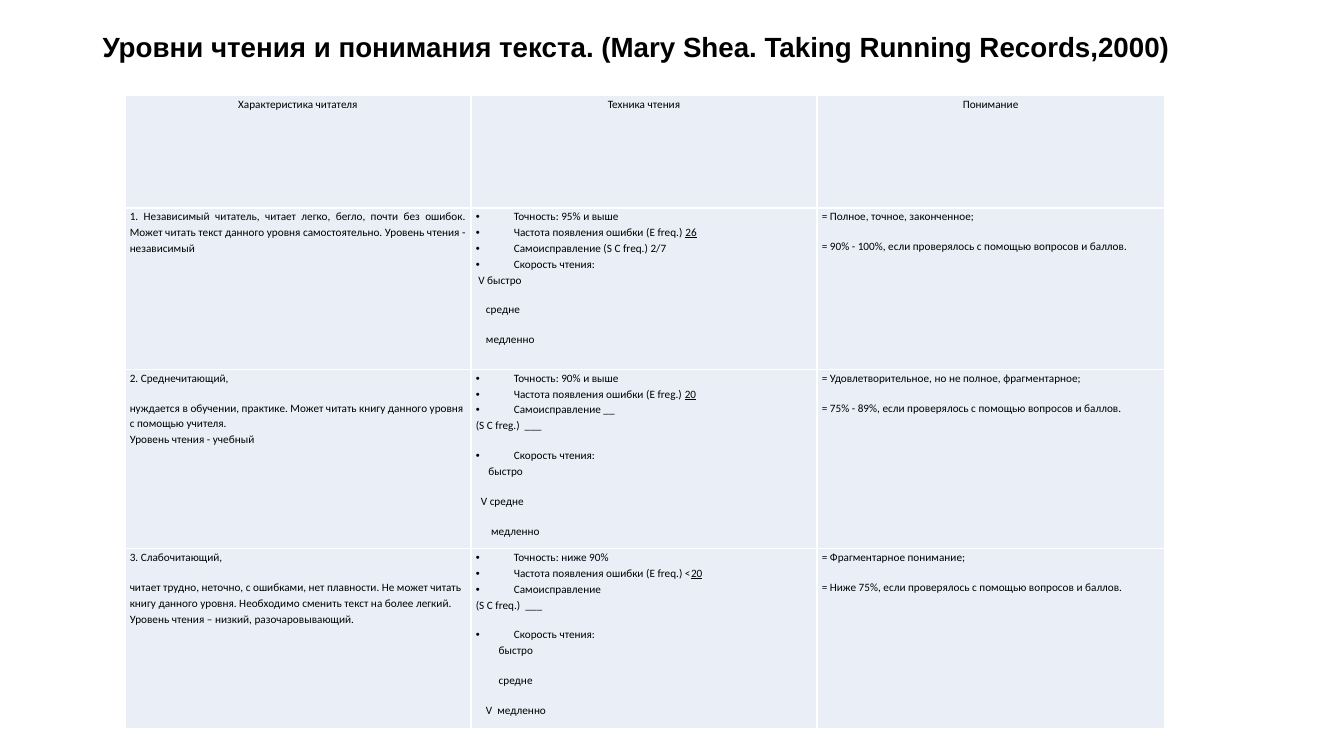
from lxml.etree import SubElement
from pptx import Presentation
from pptx.dml.color import RGBColor
from pptx.enum.text import MSO_ANCHOR, PP_ALIGN
from pptx.oxml.ns import qn
from pptx.util import Cm, Pt

BLACK = RGBColor(0x00, 0x00, 0x00)
PALE_BLUE = RGBColor(0xEA, 0xEF, 0xF7)
SPACE_WIDTH = 0.064
BULLET_INDENT = Cm(0.96)

HEADINGS = ["Характеристика читателя", "Техника чтения", "Понимание"]
LEVELS = [
    {
        "reader": [
            ("justified", "1. Независимый читатель, читает легко, бегло, почти без ошибок. "
             "Может читать текст данного уровня самостоятельно. Уровень чтения - независимый"),
        ],
        "technique": [
            ("bullet", "Точность: 95% и выше"),
            ("bullet", "Частота появления ошибки (E freq.) ", "26"),
            ("bullet", "Самоисправление (S C freq.) 2/7"),
            ("bullet", "Скорость чтения:"),
            (1, "V быстро"),
            (4, "средне"),
            (4, "медленно"),
        ],
        "understanding": [
            ("justified", "= Полное, точное, законченное;"),
            ("justified", "= 90% - 100%, если проверялось с помощью вопросов и баллов."),
        ],
    },
    {
        "reader": [
            ("justified", "2. Среднечитающий,"),
            ("left", "нуждается в обучении, практике. Может читать книгу данного уровня "
             "с помощью учителя."),
            ("justified", "Уровень чтения - учебный"),
        ],
        "technique": [
            ("bullet", "Точность: 90% и выше"),
            ("bullet", "Частота появления ошибки (E freg.) ", "20"),
            ("bullet", "Самоисправление __"),
            ("justified", "(S C freg.)  ___"),
            ("bullet", "Скорость чтения:"),
            (5, "быстро"),
            (2, "V средне"),
            (6, "медленно"),
        ],
        "understanding": [
            ("justified", "= Удовлетворительное, но не полное, фрагментарное;"),
            ("justified", "= 75% - 89%, если проверялось с помощью вопросов и баллов."),
        ],
    },
    {
        "reader": [
            ("justified", "3. Слабочитающий,"),
            ("left", "читает трудно, неточно, с ошибками, нет плавности. Не может читать "
             "книгу данного уровня. Необходимо сменить текст на более легкий."),
            ("justified", "Уровень чтения – низкий, разочаровывающий."),
        ],
        "technique": [
            ("bullet", "Точность: ниже 90%"),
            ("bullet", "Частота появления ошибки (E freq.) <", "20"),
            ("bullet", "Самоисправление"),
            ("justified", "(S C freq.)  ___"),
            ("bullet", "Скорость чтения:"),
            (9, "быстро"),
            (9, "средне"),
            (4, "V  медленно"),
        ],
        "understanding": [
            ("justified", "= Фрагментарное понимание;"),
            ("justified", "= Ниже 75%, если проверялось с помощью вопросов и баллов."),
        ],
    },
]


def write_paragraph(paragraph, style, text, underlined=None):
    alignments = {"center": PP_ALIGN.CENTER, "left": PP_ALIGN.LEFT}
    paragraph.alignment = alignments.get(style, PP_ALIGN.JUSTIFY)
    paragraph.line_spacing = 1.15
    paragraph.space_after = Pt(0 if style in ("bullet", "left") else 10)
    properties = paragraph._p.get_or_add_pPr()
    if style == "bullet":
        properties.set("marL", str(BULLET_INDENT))
        properties.set("indent", str(-BULLET_INDENT))
        SubElement(properties, qn("a:buFont"), typeface="Arial")
        SubElement(properties, qn("a:buChar"), char="•")
    elif isinstance(style, int):
        properties.set("marL", str(Cm(style * SPACE_WIDTH)))
    paragraph.font.name = "Calibri"
    paragraph.font.size = Pt(8)
    paragraph.font.color.rgb = BLACK
    paragraph.add_run().text = text
    if underlined:
        span = paragraph.add_run()
        span.text = underlined
        span.font.underline = True


def fill_cell(cell, lines):
    cell.fill.solid()
    cell.fill.fore_color.rgb = PALE_BLUE
    cell.margin_left = cell.margin_right = Cm(0.12)
    cell.margin_top = cell.margin_bottom = 0
    frame = cell.text_frame
    for number, line in enumerate(lines):
        paragraph = frame.add_paragraph() if number else frame.paragraphs[0]
        write_paragraph(paragraph, *line)


deck = Presentation()
deck.slide_width = Cm(33.87)
deck.slide_height = Cm(19.05)
page = deck.slides.add_slide(deck.slide_layouts[5])

title = page.shapes.title
title.left, title.top, title.width, title.height = Cm(2.33), Cm(0.84), Cm(29.21), Cm(3.68)
title.text_frame.text = "Уровни чтения и понимания текста. (Mary Shea. Taking Running Records,2000)"
title.text_frame.vertical_anchor = MSO_ANCHOR.TOP
title.text_frame.margin_top = 0
heading = title.text_frame.paragraphs[0]
heading.alignment = PP_ALIGN.LEFT
heading.line_spacing = 0.9
heading.font.name = "Arial"
heading.font.size = Pt(19.8)
heading.font.bold = True
heading.font.color.rgb = BLACK

table = page.shapes.add_table(
    len(LEVELS) + 1, len(HEADINGS), Cm(3.15), Cm(2.4), Cm(26.19), Cm(15.95)
).table
table.first_row = False
table.horz_banding = False
for column, width in zip(table.columns, (8.72, 8.72, 8.75)):
    column.width = Cm(width)
for row, height in zip(table.rows, (2.84, 4.07, 4.52, 4.52)):
    row.height = Cm(height)

for column_number, text in enumerate(HEADINGS):
    fill_cell(table.cell(0, column_number), [("center", text)])
for row_number, level in enumerate(LEVELS, 1):
    for column_number, lines in enumerate(level.values()):
        fill_cell(table.cell(row_number, column_number), lines)

deck.save("out.pptx")
